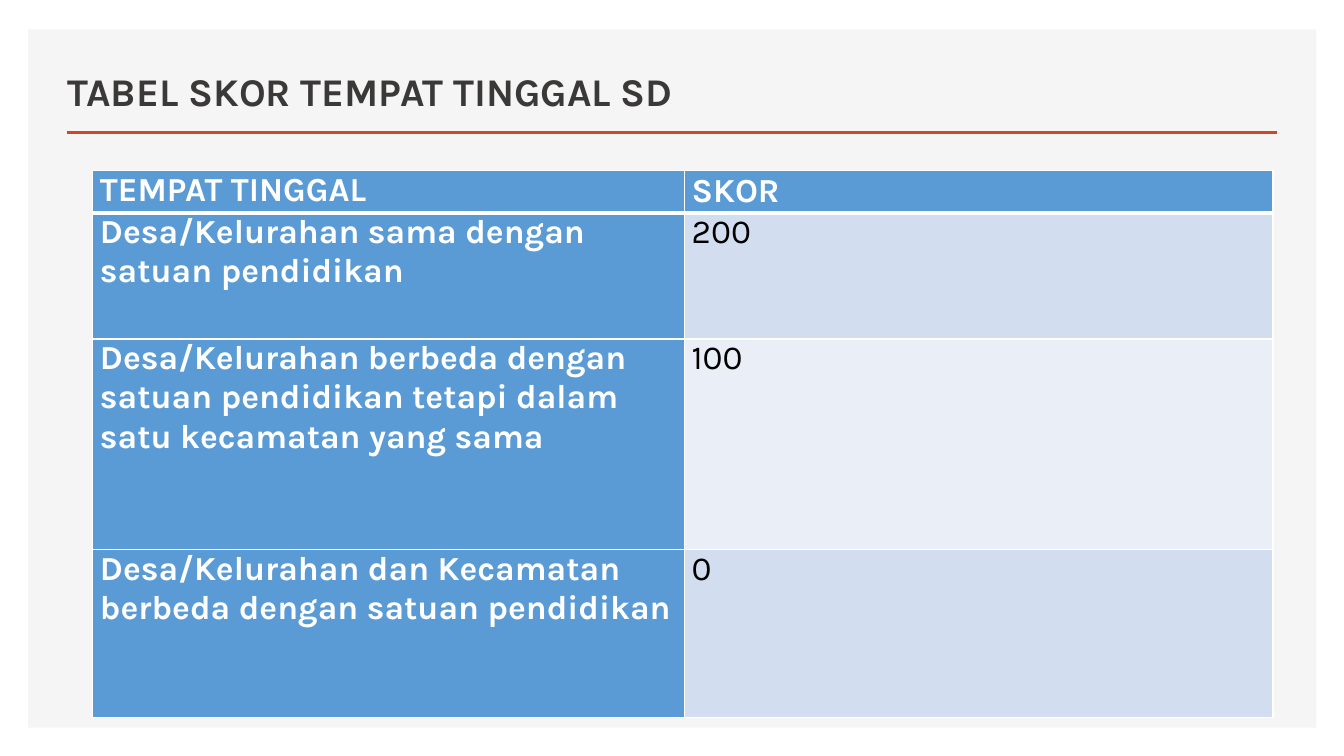
from lxml import etree
from pptx import Presentation
from pptx import util as u
from pptx.dml.color import RGBColor
from pptx.enum import shapes, text
from pptx.oxml import ns

WHITE = RGBColor(0xFF, 0xFF, 0xFF)
BLACK = RGBColor(0x00, 0x00, 0x00)
PANEL = RGBColor(0xF5, 0xF5, 0xF5)
ACCENT = RGBColor(0xD2, 0x47, 0x26)
TITLE = RGBColor(0x3B, 0x38, 0x38)
BLUE = RGBColor(0x5B, 0x9B, 0xD5)
BANDS = [RGBColor(0xD2, 0xDE, 0xEF), RGBColor(0xEA, 0xEF, 0xF7)]

ROWS = [
    ("TEMPAT TINGGAL", "SKOR"),
    ("Desa/Kelurahan sama dengan satuan pendidikan", "200"),
    ("Desa/Kelurahan berbeda dengan satuan pendidikan tetapi dalam satu kecamatan yang sama", "100"),
    ("Desa/Kelurahan dan Kecamatan berbeda dengan satuan pendidikan", "0"),
]
COL_WIDTHS = [14.91, 14.83]
ROW_HEIGHTS = [1.07, 3.18, 5.31, 4.24]


def write(tf, content, size=24, color=WHITE, bold=True, font="Karla"):
    r = tf.paragraphs[0].add_run()
    r.text = content
    r.font.name = font
    r.font.size = u.Pt(size)
    r.font.bold = bold
    r.font.color.rgb = color


def set_borders(cell, color=WHITE, bottom=1):
    tc_pr = cell._tc.get_or_add_tcPr()
    for i, side in enumerate("LRTB"):
        width = bottom if side == "B" else 1
        ln = etree.Element(ns.qn(f"a:ln{side}"), w=str(u.Pt(width)))
        fill = etree.SubElement(ln, ns.qn("a:solidFill"))
        etree.SubElement(fill, ns.qn("a:srgbClr"), val=str(color))
        tc_pr.insert(i, ln)


class Deck:
    def __init__(self, width, height):
        self.prs = Presentation()
        self.prs.slide_width = u.Cm(width)
        self.prs.slide_height = u.Cm(height)
        self.s = self.prs.slides.add_slide(self.prs.slide_layouts[6])

    def panel(self, *box):
        sp = self.s.shapes.add_shape(shapes.MSO_SHAPE.RECTANGLE, *map(u.Cm, box))
        sp.shadow.inherit = False
        sp.fill.solid()
        sp.fill.fore_color.rgb = PANEL
        sp.line.fill.background()

    def rule(self, *ends):
        sp = self.s.shapes.add_connector(shapes.MSO_CONNECTOR.STRAIGHT, *map(u.Cm, ends))
        sp.line.color.rgb = ACCENT
        sp.line.width = u.Pt(2)
        etree.SubElement(sp._element.spPr, ns.qn("a:effectLst"))

    def title(self, content, *box):
        tf = self.s.shapes.add_textbox(*map(u.Cm, box)).text_frame
        tf.word_wrap = True
        tf.vertical_anchor = text.MSO_ANCHOR.BOTTOM
        write(tf, content, size=28, color=TITLE)

    def table(self, rows, left, top, col_widths, row_heights):
        table = self.s.shapes.add_table(
            len(rows), len(col_widths), u.Cm(left), u.Cm(top),
            u.Cm(sum(col_widths)), u.Cm(sum(row_heights))).table
        for col, width in zip(table.columns, col_widths):
            col.width = u.Cm(width)
        for i, (row, height) in enumerate(zip(rows, row_heights)):
            table.rows[i].height = u.Cm(height)
            for j, content in enumerate(row):
                self.cell(table.cell(i, j), content, i, j)
        table.cell(0, 1).vertical_anchor = text.MSO_ANCHOR.MIDDLE

    def cell(self, cell, content, i, j):
        heading = i == 0 or j == 0
        cell.margin_left = cell.margin_right = u.Cm(0.18)
        cell.margin_top = cell.margin_bottom = 0
        cell.fill.solid()
        cell.fill.fore_color.rgb = BLUE if heading else BANDS[(i - 1) % 2]
        set_borders(cell, bottom=3 if i == 0 else 1)
        if i == 1:
            top = cell._tc.tcPr.find(ns.qn("a:lnT"))
            top.set("w", str(u.Pt(3)))
        write(cell.text_frame, content, color=WHITE if heading else BLACK, bold=heading)


def main():
    deck = Deck(33.87, 19.05)
    deck.panel(0.71, 0.74, 32.46, 17.6)
    deck.rule(1.68, 3.33, 32.18, 3.33)
    deck.title("TABEL SKOR TEMPAT TINGGAL SD", 1.45, 1.24, 19.1, 1.78)
    deck.table(ROWS, 2.34, 4.29, COL_WIDTHS, ROW_HEIGHTS)
    deck.prs.save("out.pptx")


if __name__ == "__main__":
    main()
